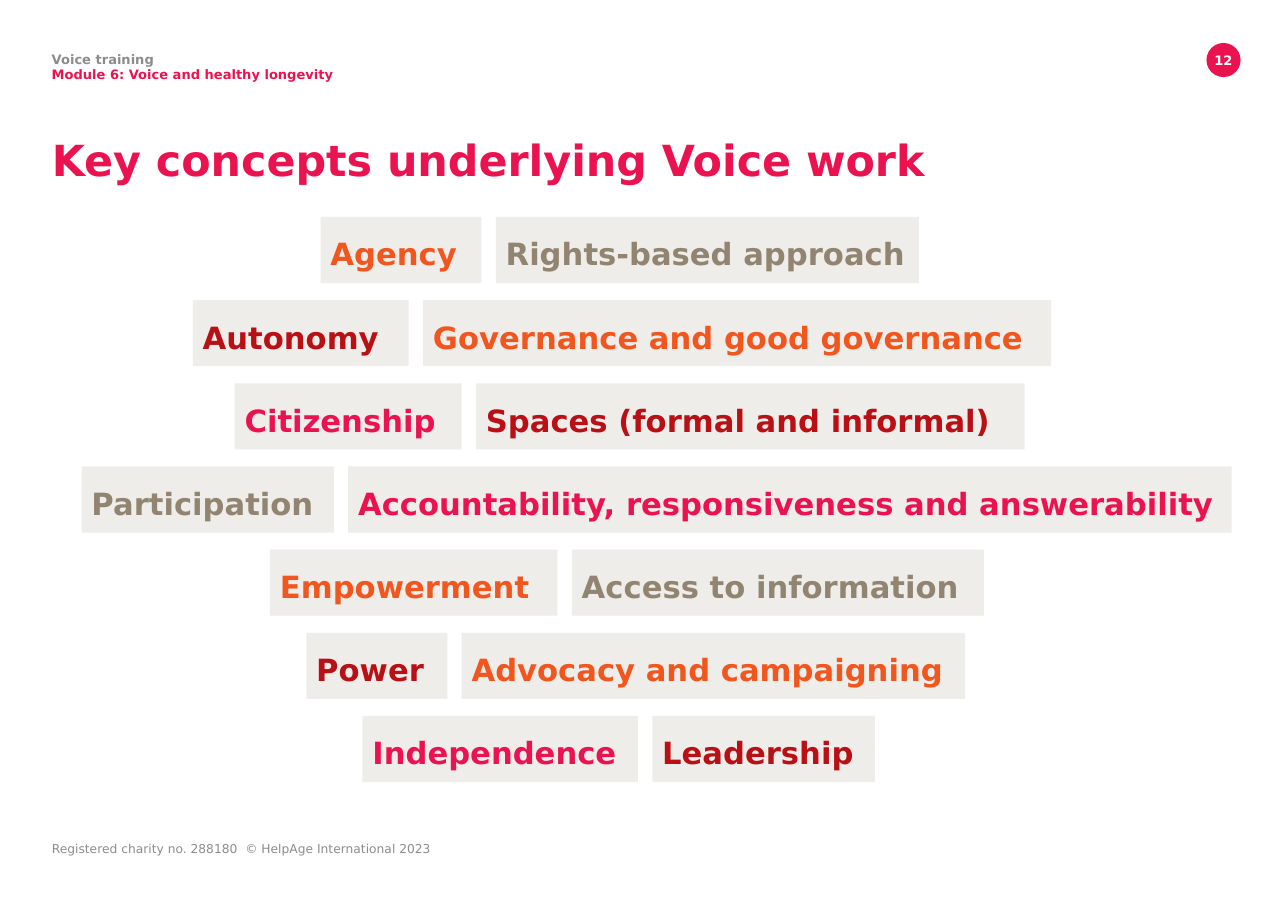
from dataclasses import dataclass

from lxml.etree import SubElement
from pptx import Presentation
from pptx.dml.color import RGBColor
from pptx.enum.shapes import MSO_SHAPE
from pptx.enum.text import MSO_ANCHOR, PP_ALIGN
from pptx.oxml.ns import qn
from pptx.util import Pt

PIXEL = 4572


@dataclass(frozen=True)
class Theme:
    font: str = "DejaVu Sans"
    pink: str = "EB134F"
    orange: str = "F0561E"
    red: str = "B91015"
    taupe: str = "918470"
    grey: str = "8C8C8C"
    white: str = "FFFFFF"
    title_size: float = 28
    concept_size: float = 20
    header_size: float = 8.5
    footer_size: float = 8
    tile_opacity: int = 14


THEME = Theme()
CONCEPT_COLOURS = (THEME.orange, THEME.red, THEME.pink, THEME.taupe)
CONCEPT_ROWS = (
    (582, "Agency", 292, "Rights-based approach", 768),
    (350, "Autonomy", 392, "Governance and good governance", 1140),
    (426, "Citizenship", 412, "Spaces (formal and informal)", 996),
    (148, "Participation", 458, "Accountability, responsiveness and answerability", 1604),
    (490, "Empowerment", 522, "Access to information", 748),
    (556, "Power", 256, "Advocacy and campaigning", 914),
    (658, "Independence", 500, "Leadership", 404),
)


def emu(box):
    return [length * PIXEL for length in box]


def set_frame(text_frame, margin=0, anchor=MSO_ANCHOR.TOP, wrap=True):
    text_frame.word_wrap = wrap
    text_frame.vertical_anchor = anchor
    text_frame.margin_left = text_frame.margin_right = margin * PIXEL
    text_frame.margin_top = text_frame.margin_bottom = margin * PIXEL


def style(paragraph, size, colour, bold=True, align=PP_ALIGN.LEFT, spacing=None):
    paragraph.alignment = align
    paragraph.line_spacing = spacing
    for run in paragraph.runs:
        run.font.name = THEME.font
        run.font.size = Pt(size)
        run.font.bold = bold
        run.font.color.rgb = RGBColor.from_string(colour)


def add_filled_shape(slide, kind, box, colour):
    shape = slide.shapes.add_shape(kind, *emu(box))
    shape.shadow.inherit = False
    shape.fill.solid()
    shape.fill.fore_color.rgb = RGBColor.from_string(colour)
    shape.line.fill.background()
    return shape


def add_title(slide, box):
    title = slide.shapes.title
    title.left, title.top, title.width, title.height = emu(box)
    title.text_frame.text = "Key concepts underlying Voice work"
    set_frame(title.text_frame)
    style(title.text_frame.paragraphs[0], THEME.title_size, THEME.pink, spacing=Pt(33))


def add_header(slide, box):
    text_frame = slide.shapes.add_textbox(*emu(box)).text_frame
    set_frame(text_frame)
    text_frame.text = "Voice training\nModule 6: Voice and healthy longevity"
    for paragraph, colour in zip(text_frame.paragraphs, (THEME.grey, THEME.pink)):
        style(paragraph, THEME.header_size, colour, spacing=Pt(10))


def add_page_number(slide, box):
    badge = add_filled_shape(slide, MSO_SHAPE.OVAL, box, THEME.pink)
    set_frame(badge.text_frame, anchor=MSO_ANCHOR.MIDDLE, wrap=False)
    badge.text_frame.text = "12"
    style(badge.text_frame.paragraphs[0], THEME.header_size, THEME.white, align=PP_ALIGN.CENTER)


def add_footer(slide, box):
    text_frame = slide.shapes.add_textbox(*emu(box)).text_frame
    set_frame(text_frame)
    text_frame.text = "Registered charity no. 288180  © HelpAge International 2023"
    style(text_frame.paragraphs[0], THEME.footer_size, THEME.grey, bold=False)


def add_concept(slide, box, text, colour):
    tile = add_filled_shape(slide, MSO_SHAPE.RECTANGLE, box, THEME.taupe)
    fill_colour = tile.fill._xPr.find(qn("a:solidFill"))[0]
    SubElement(fill_colour, qn("a:alpha")).set("val", str(THEME.tile_opacity * 1000))
    set_frame(tile.text_frame, margin=18, anchor=MSO_ANCHOR.MIDDLE, wrap=False)
    tile.text_frame.text = text
    style(tile.text_frame.paragraphs[0], THEME.concept_size, colour, spacing=1.2)


def add_concepts(slide, box):
    left, top, width, height = box
    tile_height, gap = 120, 26
    pitch = (height - tile_height) // (len(CONCEPT_ROWS) - 1)
    for row, (start, first, first_width, second, second_width) in enumerate(CONCEPT_ROWS):
        tile_left, tile_top = left + start - CONCEPT_ROWS[3][0], top + row * pitch
        tiles = ((first, first_width, row), (second, second_width, row - 1))
        for text, tile_width, colour_index in tiles:
            colour = CONCEPT_COLOURS[colour_index % len(CONCEPT_COLOURS)]
            add_concept(slide, (tile_left, tile_top, tile_width, tile_height), text, colour)
            tile_left += tile_width + gap


def main():
    presentation = Presentation()
    presentation.slide_width, presentation.slide_height = emu((2338, 1654))
    slide = presentation.slides.add_slide(presentation.slide_layouts[5])
    add_page_number(slide, (2190, 78, 62, 62))
    add_footer(slide, (94, 1528, 922, 66))
    add_title(slide, (94, 244, 1848, 154))
    add_header(slide, (94, 94, 1026, 88))
    add_concepts(slide, (148, 394, 2088, 1026))
    presentation.save("out.pptx")


if __name__ == "__main__":
    main()
